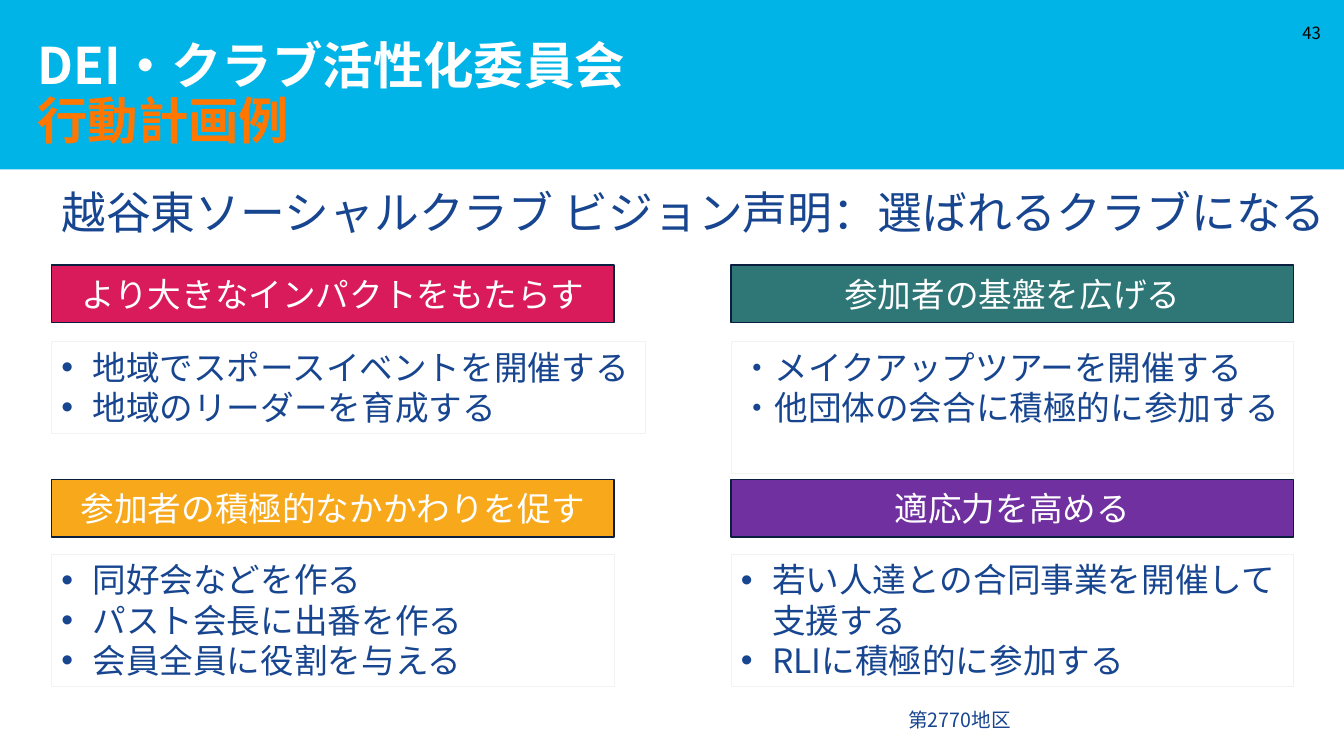
from dataclasses import dataclass
from typing import Any

import lxml.etree
import pptx
import pptx.dml.color
import pptx.enum.shapes
import pptx.enum.text
import pptx.oxml.ns
import pptx.util

Inches = pptx.util.Inches
Align = pptx.enum.text.PP_ALIGN
Anchor = pptx.enum.text.MSO_ANCHOR
FONT = "Noto Sans CJK JP"
NAVY = "17458F"
WHITE = "FFFFFF"
HEADING_EDGE = "0A1E3F"
BOX_EDGE = "F2F2F2"
COLUMNS = (0.51, 7.25)
HEADING_TOPS = (2.63, 4.76)
BOX_TOPS = (3.39, 5.5)
PANEL_WIDTH = 5.58
INDENT = 0.31


@dataclass(frozen=True)
class Panel:
    column: int
    row: int
    heading: str
    color: str
    items: tuple[str, ...]
    box_height: float = 1.31
    box_width: float = PANEL_WIDTH
    bulleted: bool = True
    box_fill: str | None = None


@dataclass(frozen=True)
class Label:
    text: str
    area: tuple[float, float, float, float]
    size: float
    color: str = NAVY
    alignment: Any = Align.LEFT
    anchor: Any = Anchor.TOP


PANELS = (
    Panel(0, 0, "より大きなインパクトをもたらす", "D91B5C",
          ("地域でスポースイベントを開催する", "地域のリーダーを育成する"),
          box_height=0.91, box_width=5.89),
    Panel(1, 0, "参加者の基盤を広げる", "2F7777",
          ("・メイクアップツアーを開催する", "・他団体の会合に積極的に参加する"),
          bulleted=False),
    Panel(0, 1, "参加者の積極的なかかわりを促す", "F7A81B",
          ("同好会などを作る", "パスト会長に出番を作る", "会員全員に役割を与える")),
    Panel(1, 1, "適応力を高める", "7030A0",
          ("若い人達との合同事業を開催して支援する", "RLIに積極的に参加する"),
          box_fill=WHITE),
)

LABELS = (
    Label("第2770地区", (8.91, 6.97, 1.23, 0.34), 14),
    Label("43", (12.74, 0.13, 0.46, 0.4), 12, "000000", Align.RIGHT, Anchor.MIDDLE),
    Label("越谷東ソーシャルクラブ ビジョン声明：選ばれるクラブになる",
          (0.51, 1.78, 12.87, 0.64), 32),
)


def rgb(value: str) -> pptx.dml.color.RGBColor:
    return pptx.dml.color.RGBColor.from_string(value)


def apply(target: Any, values: dict[str, Any]) -> None:
    for name, value in values.items():
        setattr(target, name, value)


def add_run(paragraph: Any, text: str, size: float, color: str, bold: bool = False) -> Any:
    run = paragraph.add_run()
    run.text = text
    apply(run.font, {"name": FONT, "size": pptx.util.Pt(size), "bold": bold})
    run.font.color.rgb = rgb(color)
    latin = run.font._element.find(pptx.oxml.ns.qn("a:latin"))
    east_asian = lxml.etree.Element(pptx.oxml.ns.qn("a:ea"), typeface=FONT)
    latin.addnext(east_asian)
    return run


def add_bullet(paragraph: Any) -> None:
    properties = paragraph._p.get_or_add_pPr()
    properties.set("marL", str(Inches(INDENT)))
    properties.set("indent", str(-Inches(INDENT)))
    lxml.etree.SubElement(properties, pptx.oxml.ns.qn("a:buFont"), typeface="Arial")
    lxml.etree.SubElement(properties, pptx.oxml.ns.qn("a:buChar"), char="•")


def add_rectangle(slide: Any, area: tuple[float, float, float, float],
                  fill: str | None, edge: str | None = None, width: float = 1) -> Any:
    shape = slide.shapes.add_shape(
        pptx.enum.shapes.MSO_SHAPE.RECTANGLE, *map(Inches, area))
    shape.shadow.inherit = False
    if fill:
        shape.fill.solid()
        shape.fill.fore_color.rgb = rgb(fill)
    else:
        shape.fill.background()
    if edge:
        shape.line.color.rgb = rgb(edge)
        shape.line.width = pptx.util.Pt(width)
    else:
        shape.line.fill.background()
    return shape


def add_label(slide: Any, label: Label) -> None:
    frame = slide.shapes.add_textbox(*map(Inches, label.area)).text_frame
    apply(frame, {"word_wrap": True, "vertical_anchor": label.anchor})
    paragraph = frame.paragraphs[0]
    paragraph.alignment = label.alignment
    add_run(paragraph, label.text, label.size, label.color)


def add_panel(slide: Any, panel: Panel) -> None:
    left = COLUMNS[panel.column]
    heading = add_rectangle(
        slide, (left, HEADING_TOPS[panel.row], PANEL_WIDTH, 0.57), panel.color, HEADING_EDGE)
    apply(heading.text_frame, {"word_wrap": True, "vertical_anchor": Anchor.MIDDLE})
    paragraph = heading.text_frame.paragraphs[0]
    paragraph.alignment = Align.CENTER
    add_run(paragraph, panel.heading, 24, WHITE)

    box = add_rectangle(
        slide, (left, BOX_TOPS[panel.row], panel.box_width, panel.box_height),
        panel.box_fill, BOX_EDGE, 0.5)
    frame = box.text_frame
    apply(frame, {"word_wrap": True, "vertical_anchor": Anchor.TOP})
    for index, item in enumerate(panel.items):
        paragraph = frame.add_paragraph() if index else frame.paragraphs[0]
        paragraph.alignment = Align.LEFT
        if panel.bulleted:
            add_bullet(paragraph)
        add_run(paragraph, item, 24, NAVY)


def format_title(title: Any) -> None:
    apply(title, {"left": Inches(0.27), "top": Inches(0.43),
                  "width": Inches(11.7), "height": Inches(1.16)})
    frame = title.text_frame
    apply(frame, {"word_wrap": True, "vertical_anchor": Anchor.BOTTOM,
                  "auto_size": pptx.enum.text.MSO_AUTO_SIZE.NONE,
                  "margin_left": Inches(0.1), "margin_top": 0,
                  "margin_right": Inches(0.1), "margin_bottom": Inches(0.1)})
    paragraph = frame.paragraphs[0]
    apply(paragraph, {"alignment": Align.LEFT, "line_spacing": 0.9})
    add_run(paragraph, "DEI・クラブ活性化委員会", 36, WHITE, True)
    paragraph.add_line_break()
    subtitle = add_run(paragraph, "行動計画例", 36, "FF7600", True)
    outline = lxml.etree.Element(
        pptx.oxml.ns.qn("a:ln"), w=str(pptx.util.Pt(0.75)))
    fill = lxml.etree.SubElement(outline, pptx.oxml.ns.qn("a:solidFill"))
    lxml.etree.SubElement(fill, pptx.oxml.ns.qn("a:srgbClr"), val=WHITE)
    subtitle.font._element.insert(0, outline)


def main() -> None:
    presentation = pptx.Presentation()
    apply(presentation, {"slide_width": Inches(13.33), "slide_height": Inches(7.5)})
    slide = presentation.slides.add_slide(presentation.slide_layouts[5])
    band = add_rectangle(slide, (0, 0, 13.33, 1.68), "01B4E7")
    title = slide.shapes.title
    title._element.addprevious(band._element)
    format_title(title)
    for label in LABELS:
        add_label(slide, label)
    for panel in PANELS:
        add_panel(slide, panel)
    presentation.save("out.pptx")


if __name__ == "__main__":
    main()
